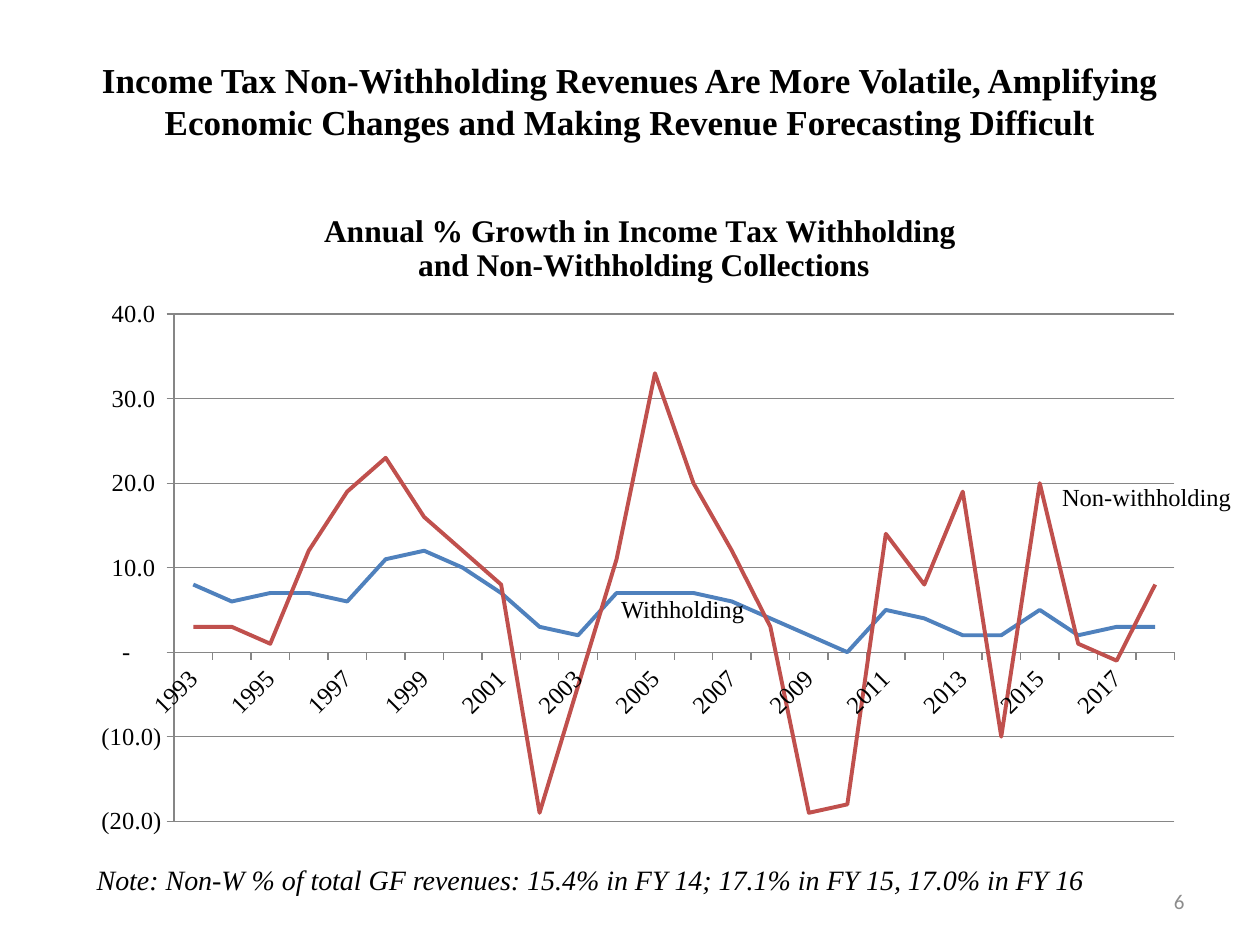
from lxml.etree import SubElement
from pptx import Presentation
from pptx.chart.data import CategoryChartData
from pptx.dml.color import RGBColor
from pptx.enum.chart import XL_CHART_TYPE, XL_MARKER_STYLE, XL_TICK_MARK
from pptx.enum.text import MSO_ANCHOR, MSO_AUTO_SIZE, PP_ALIGN
from pptx.oxml.ns import qn
from pptx.util import Cm, Pt

COLOURS = {"text": "000000", "number": "8C8C8C", "axis": "868686",
           "Withholding": "4F81BD", "Non-withholding": "C0504D"}
SERIF = "Times New Roman"
TITLE = ("Income Tax Non-Withholding Revenues Are More Volatile, Amplifying "
         "Economic Changes and Making Revenue Forecasting Difficult")
CHART_TITLE = ["Annual % Growth in Income Tax Withholding",
               " and Non-Withholding Collections"]
YEARS = [str(year) for year in range(1993, 2019)]
GROWTH = {
    "Withholding": [8, 6, 7, 7, 6, 11, 12, 10, 7, 3, 2, 7, 7,
                    7, 6, 4, 2, 0, 5, 4, 2, 2, 5, 2, 3, 3],
    "Non-withholding": [3, 3, 1, 12, 19, 23, 16, 12, 8, -19, -4, 11, 33,
                        20, 12, 3, -19, -18, 14, 8, 19, -10, 20, 1, -1, 8],
}
NUMBER_FORMAT = r'_(* #,##0.0_);_(* \(#,##0.0\);_(* "-"??_);_(@_)'
TITLE_PLACE = (1.27, 1.05, 22.86, 1.57)
CHART_PLACE = (1.47, 3.81, 22.66, 13.28)
PLOT_LAYOUT = {"layoutTarget": "inner", "xMode": "edge", "yMode": "edge",
               "x": 0.09, "y": 0.19, "w": 0.89, "h": 0.77}
TITLE_LAYOUT = {"xMode": "edge", "yMode": "edge", "x": 0.22, "y": 0.03}
NOTES = [
    ("Note: Non-W % of total GF revenues: 15.4% in FY 14; 17.1% in FY 15, 17.0% in FY 16",
     (1.7, 17.27, 20.55, 0.94), {"size": Pt(16), "italic": True}),
    ("Non-withholding", (21.16, 9.6, 3.94, 0.86), {"size": Pt(14)}),
    ("Withholding", (12.27, 11.86, 3.02, 0.86), {"size": Pt(14)}),
]


def set_all(target, values):
    """Set every named attribute of the target."""
    for name, value in values.items():
        setattr(target, name, value)


def style_font(font, colour="text", **values):
    """Give a font its face, colour and other values."""
    set_all(font, {"name": SERIF, **values})
    font.color.rgb = RGBColor.from_string(COLOURS[colour])


def style_line(line, colour, width):
    """Give a line its colour and width."""
    line.color.rgb = RGBColor.from_string(COLOURS[colour])
    line.width = Pt(width)


def place(values):
    """Turn centimetres into lengths."""
    return [Cm(value) for value in values]


def write(box, text, frame_values, align, **font_values):
    """Write one formatted paragraph in a box."""
    set_all(box.text_frame, frame_values)
    para = box.text_frame.paragraphs[0]
    para.alignment = align
    span = para.add_run()
    span.text = text
    style_font(span.font, **font_values)


def set_layout(parent, position, values):
    """Fix the place of a chart part by fractions of the chart."""
    for old in parent.findall(qn("c:layout")):
        parent.remove(old)
    layout = SubElement(parent, qn("c:layout"))
    parent.insert(position, layout)
    manual = SubElement(layout, qn("c:manualLayout"))
    for name, value in values.items():
        SubElement(manual, qn(f"c:{name}")).set("val", str(value))


def add_growth_chart(page):
    """Add the line chart of both growth series."""
    data = CategoryChartData()
    data.categories = YEARS
    for name, values in GROWTH.items():
        data.add_series(name, values)
    chart = page.shapes.add_chart(XL_CHART_TYPE.LINE, *place(CHART_PLACE), data).chart
    chart.has_legend = False
    style_font(chart.font, size=Pt(14))

    frame = chart.chart_title.text_frame
    for index, text in enumerate(CHART_TITLE):
        para = frame.add_paragraph() if index else frame.paragraphs[0]
        span = para.add_run()
        span.text = text
        style_font(span.font, size=Pt(18), bold=True)
    chart.chart_title.include_in_layout = False

    for series in chart.plots[0].series:
        series.smooth = False
        series.marker.style = XL_MARKER_STYLE.NONE
        style_line(series.format.line, series.name, 2.25)
    chart.plots[0].vary_by_categories = False

    years, growth = chart.category_axis, chart.value_axis
    for axis in (years, growth):
        axis.major_tick_mark = XL_TICK_MARK.OUTSIDE
        style_line(axis.format.line, "axis", 0.75)
        style_font(axis.tick_labels.font, size=Pt(14))
    set_all(growth, {"minimum_scale": -20, "maximum_scale": 40, "major_unit": 10,
                     "has_major_gridlines": True})
    style_line(growth.major_gridlines.format.line, "axis", 0.75)
    set_all(growth.tick_labels, {"number_format": NUMBER_FORMAT,
                                 "number_format_is_linked": False})
    axis_xml = years._element
    axis_xml.find(qn("c:txPr")).find(qn("a:bodyPr")).set("rot", "-2700000")
    skip = SubElement(axis_xml, qn("c:tickLblSkip"))
    skip.set("val", "2")
    axis_xml.find(qn("c:noMultiLvlLbl")).addprevious(skip)

    set_layout(chart._chartSpace.chart.plotArea, 0, PLOT_LAYOUT)
    set_layout(chart.chart_title._element, 1, TITLE_LAYOUT)


def main():
    """Build the slide and save it."""
    deck = Presentation()
    set_all(deck, {"slide_width": Cm(25.4), "slide_height": Cm(19.05)})
    page = deck.slides.add_slide(deck.slide_layouts[5])
    title = page.shapes.title
    set_all(title, dict(zip(("left", "top", "width", "height"), place(TITLE_PLACE))))
    write(title, TITLE,
          {"word_wrap": True, "vertical_anchor": MSO_ANCHOR.TOP, "auto_size": MSO_AUTO_SIZE.NONE},
          PP_ALIGN.CENTER, size=Pt(20), bold=True)
    add_growth_chart(page)
    for text, spot, font_values in NOTES:
        box = page.shapes.add_textbox(*place(spot))
        write(box, text, {"word_wrap": False, "auto_size": MSO_AUTO_SIZE.SHAPE_TO_FIT_TEXT},
              PP_ALIGN.LEFT, **font_values)
    number = page.shapes.add_textbox(*place((18.21, 17.65, 5.92, 1.02)))
    write(number, "6", {"word_wrap": True, "vertical_anchor": MSO_ANCHOR.MIDDLE},
          PP_ALIGN.RIGHT, colour="number", name="Calibri", size=Pt(12))
    deck.save("out.pptx")


if __name__ == "__main__":
    main()
